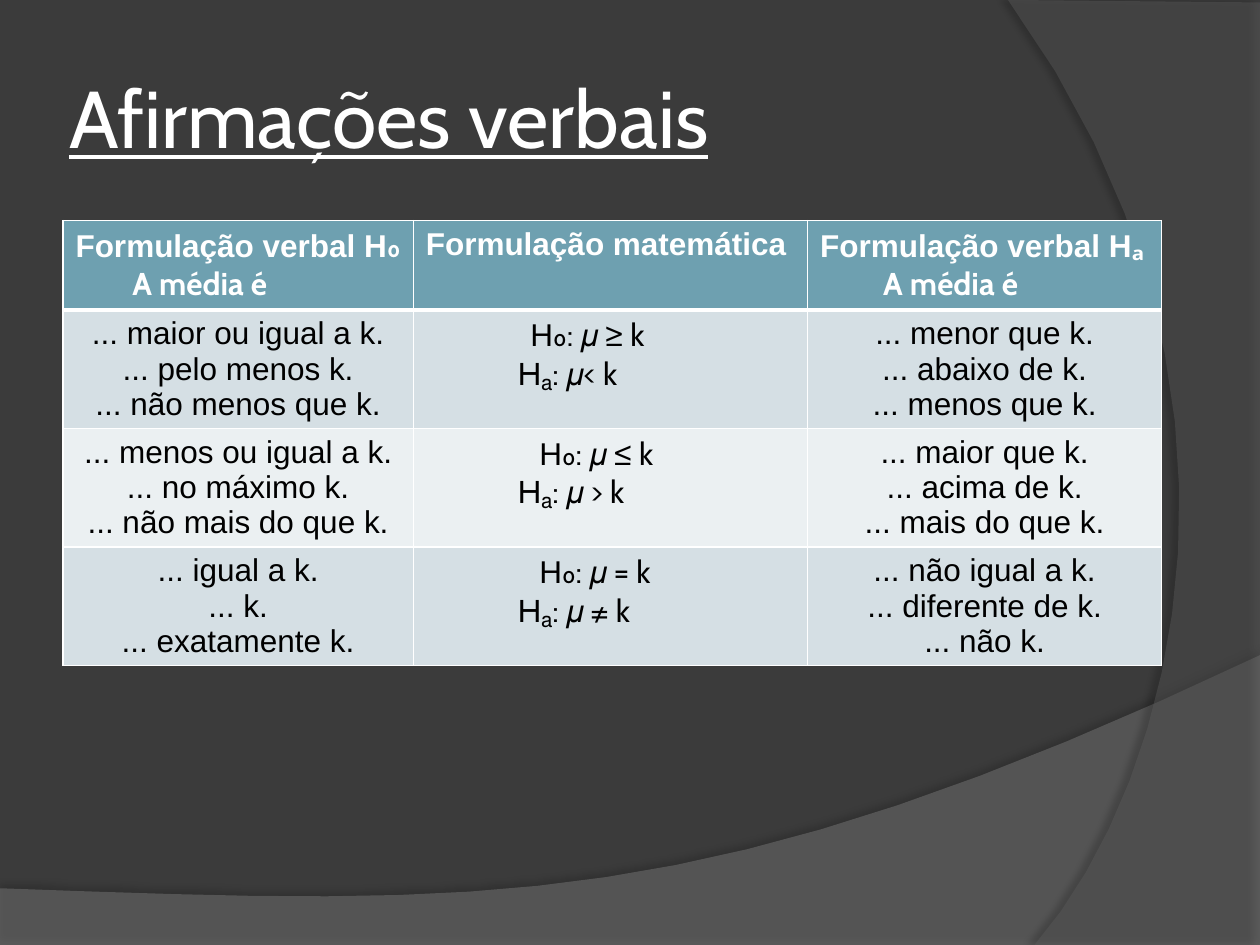
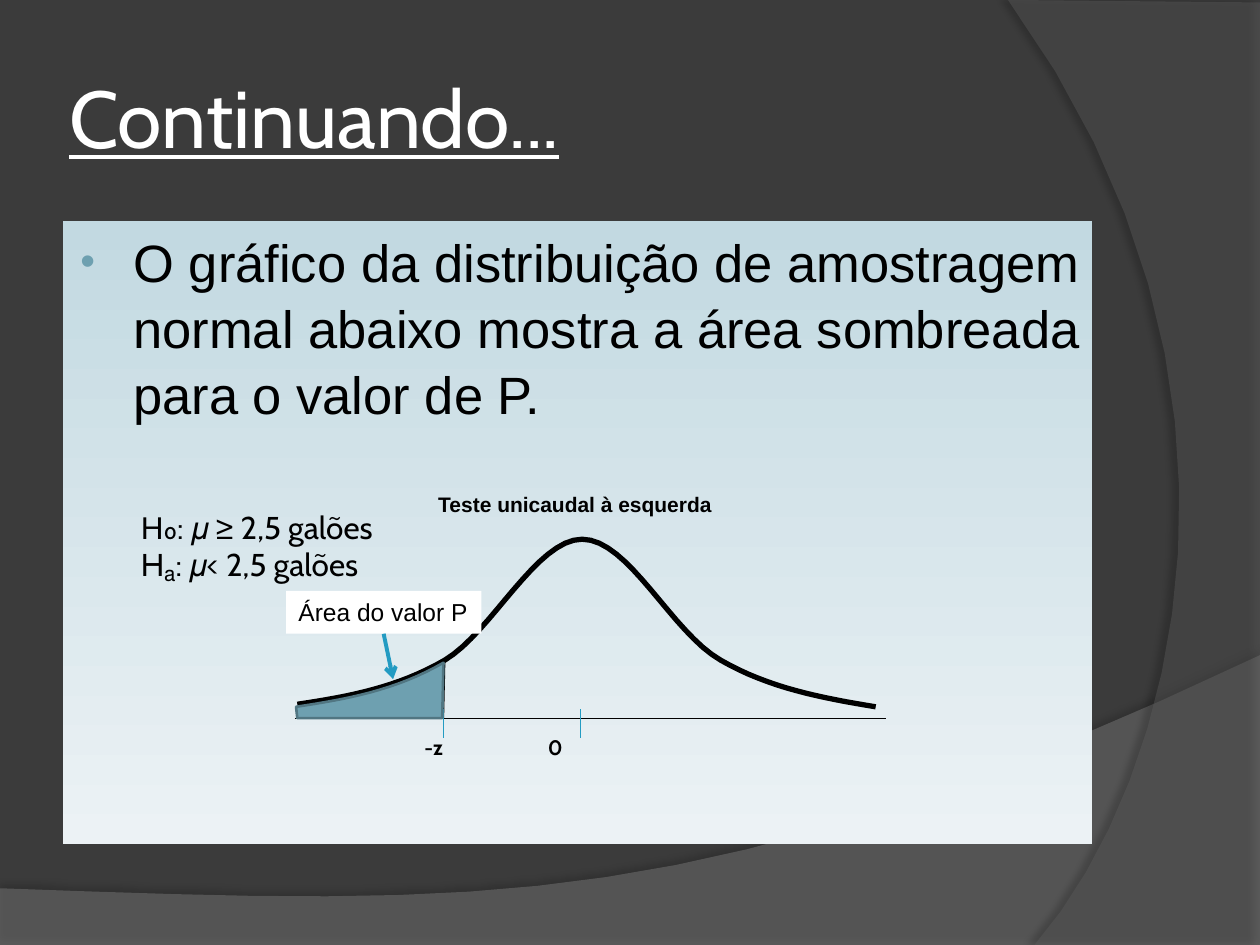
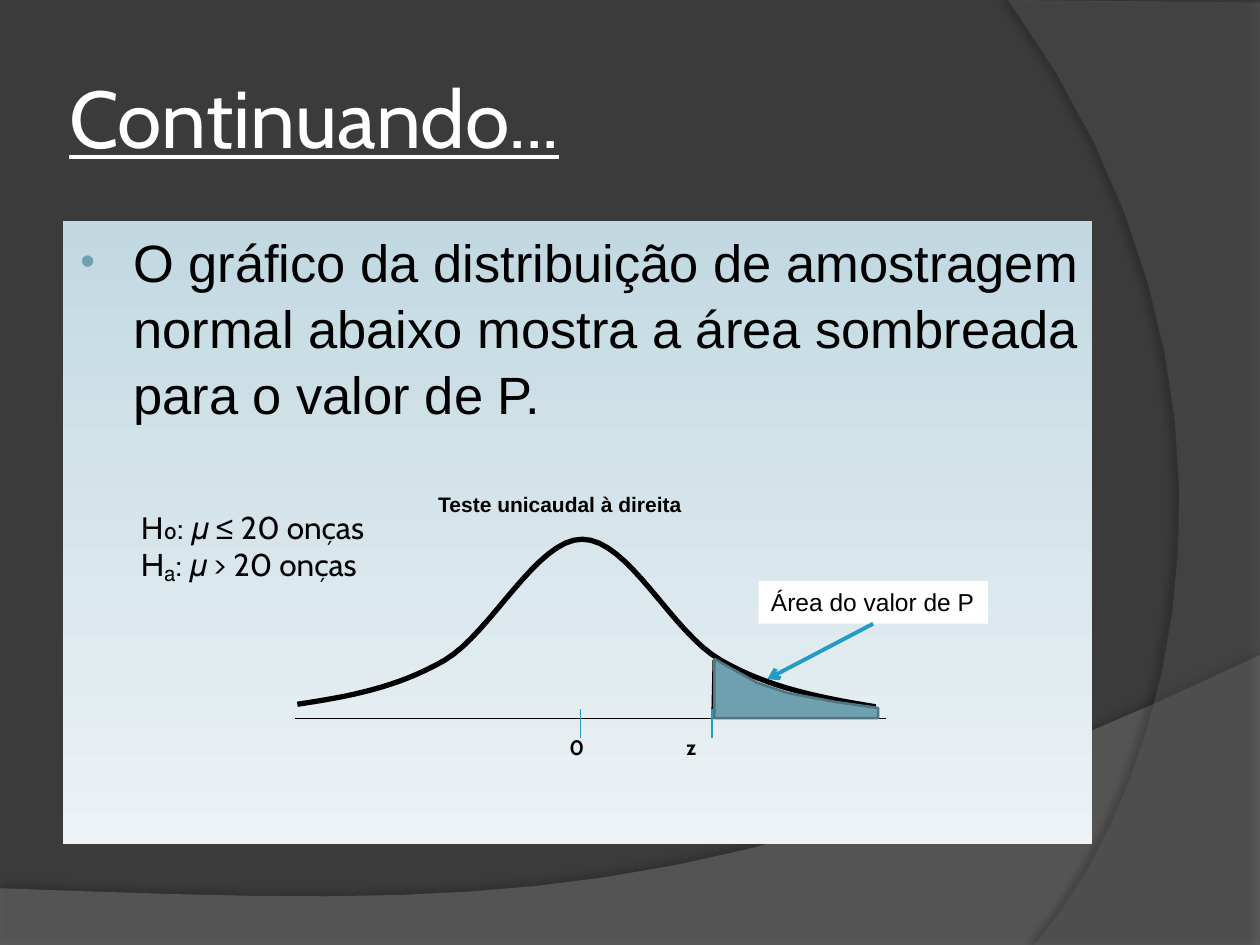
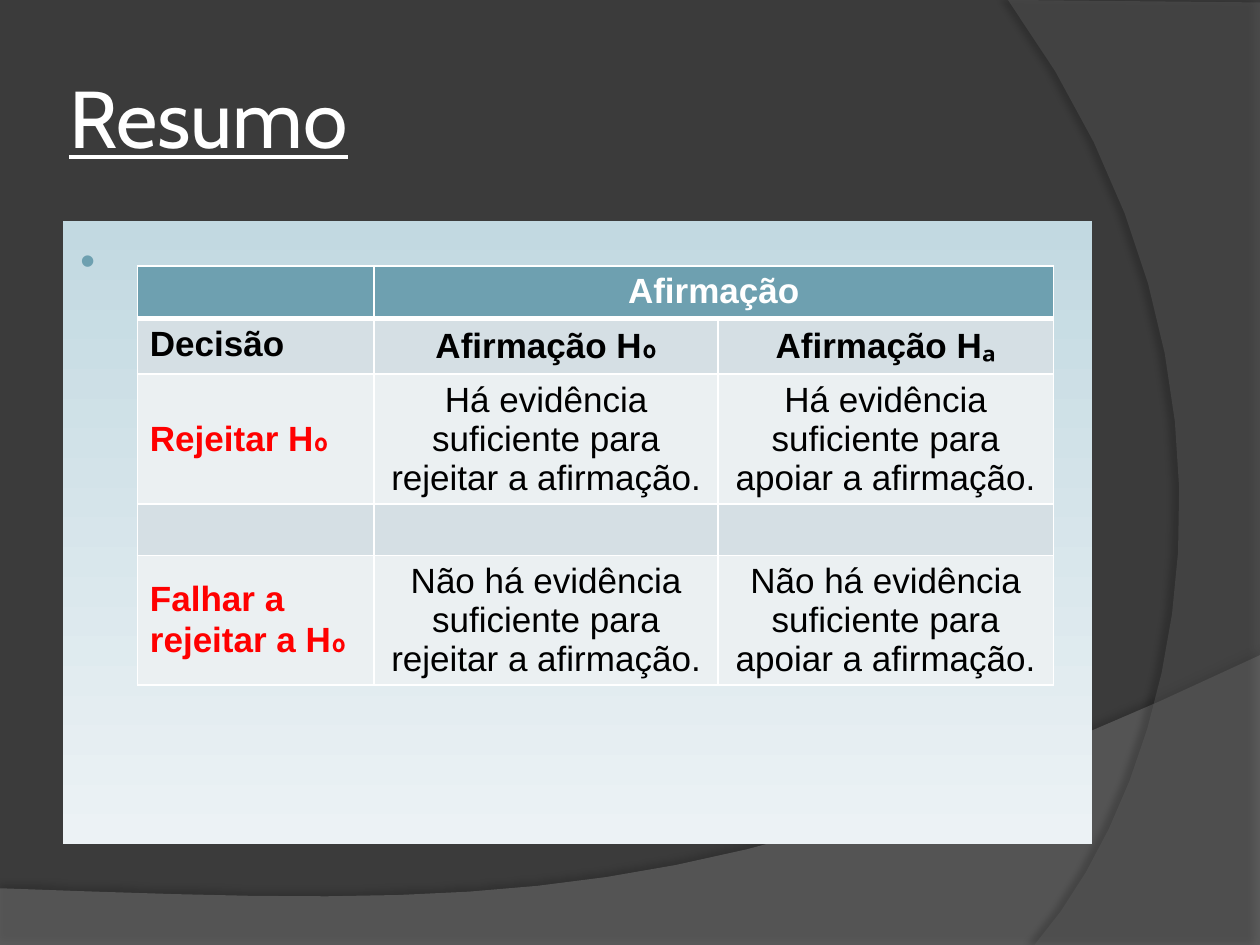
"""Builds four slides on hypothesis tests: verbal claims, two tail areas and a summary."""
import dataclasses

import lxml.etree
import pptx
import pptx.dml.color
import pptx.enum.shapes
import pptx.enum.text
import pptx.oxml.ns
import pptx.util

Inches = pptx.util.Inches
Pt = pptx.util.Pt
qn = pptx.oxml.ns.qn
ALIGN = pptx.enum.text.PP_ALIGN
ANCHOR = pptx.enum.text.MSO_ANCHOR

SANS, DISPLAY = "Arial", "Cabin"
WHITE, BLACK, RED = "FFFFFF", "000000", "FF0000"
BACKDROP, TEAL, TEAL_EDGE, BLUE = "3B3B3B", "6EA0B0", "517682", "239BC2"
ROW_FILLS = ("D5DFE4", "EBF0F2")
PANEL_FILLS = ("C2D9E1", "ECF2F5")
BASELINE = 5.7


def colour(hex_text):
    """Turn a hex string into a colour."""
    return pptx.dml.color.RGBColor.from_string(hex_text)


def add_xml(parent, tag, **attributes):
    """Append a drawing element with the given attributes."""
    values = {name: str(value) for name, value in attributes.items()}
    return lxml.etree.SubElement(parent, qn(tag), values)


def bezier(start, first, second, end, steps=16):
    """Return points along a cubic curve, both ends included."""
    points = []
    for step in range(steps + 1):
        t = step / steps
        weights = ((1 - t) ** 3, 3 * t * (1 - t) ** 2, 3 * t * t * (1 - t), t ** 3)
        points.append(tuple(sum(w * p[axis] for w, p in zip(weights, (start, first, second, end)))
                            for axis in (0, 1)))
    return points


LEFT_TAIL = bezier((2.36, 5.59), (2.76, 5.53), (3.15, 5.46), (3.53, 5.24))
RISE = bezier((3.53, 5.24), (3.9, 5.02), (4.26, 4.28), (4.62, 4.28))
FALL = bezier((4.62, 4.28), (4.99, 4.28), (5.33, 5.02), (5.72, 5.24))
RIGHT_TAIL = bezier((5.72, 5.24), (6.1, 5.46), (6.52, 5.54), (6.95, 5.61))


@dataclasses.dataclass
class Words:
    """Lines of text with one look; a bar in a line switches to the display font."""
    lines: tuple
    size: float = 18
    ink: str = BLACK
    bold: bool = False
    align: object = ALIGN.LEFT
    indents: tuple = ()
    anchor: object = ANCHOR.TOP


class Slides:
    """Holds the deck, its shared style and the current page."""

    def __init__(self):
        """Set the slide size and clean the shared layout."""
        self.deck = pptx.Presentation()
        self.deck.slide_width, self.deck.slide_height = Inches(10), Inches(7.5)
        self.layout = self.deck.slide_layouts[5]
        self.page = None
        fill = self.layout.background.fill
        fill.solid()
        fill.fore_color.rgb = colour(BACKDROP)
        for holder in list(self.layout.placeholders):
            if holder.placeholder_format.idx >= 10:
                holder.element.getparent().remove(holder.element)

    def new_page(self, title):
        """Start a page with its underlined title."""
        self.page = self.deck.slides.add_slide(self.layout)
        if len(self.deck.slides) == 1:
            self.shared_bands()
        box = self.page.shapes.title
        box.left, box.top, box.width, box.height = map(Inches, (0.5, 0.3, 8.17, 1.25))
        frame = box.text_frame
        frame.margin_left = frame.margin_right = Inches(0.05)
        frame.auto_size = pptx.enum.text.MSO_AUTO_SIZE.NONE
        self.set_words(frame, Words((f"|{title}",), 46, WHITE, anchor=ANCHOR.MIDDLE))
        for span in frame.paragraphs[0].runs:
            span.font.underline = True

    def shared_bands(self):
        """Draw the two translucent curved bands and place them in the layout."""
        bottom = [(0, 7.5), (10, 7.5)] + bezier((10, 5.2), (5.59, 7.29), (3.91, 7.19), (0, 7.05))
        right = [(10, 0.02), (10, 7.5)] + bezier((8.21, 7.5), (9.35, 6.19), (10.18, 3), (8, 0))
        looks = ((bottom, "7F7F7F", 45, 35, 3.5, 270), (right, "5E5E5E", 40, 45, 4, 180))
        for place, (points, fill, opacity, darkness, distance, angle) in enumerate(looks):
            band = self.outline(points, fill=fill)
            properties = band.element.spPr
            add_xml(properties.find(f"{qn('a:solidFill')}/{qn('a:srgbClr')}"),
                    "a:alpha", val=opacity * 1000)
            shadow = add_xml(properties.find(qn("a:effectLst")), "a:outerShdw", blurRad=Pt(4),
                             dist=Pt(distance), dir=angle * 60000, algn="ctr", rotWithShape=0)
            add_xml(add_xml(shadow, "a:srgbClr", val=BLACK), "a:alpha", val=darkness * 1000)
            self.layout.shapes.element.insert(2 + place, band.element)

    def set_words(self, frame, words):
        """Fill a text frame with words."""
        frame.vertical_anchor = words.anchor
        for number, line in enumerate(words.lines):
            para = frame.paragraphs[0] if number == 0 else frame.add_paragraph()
            para.alignment = words.align
            if words.indents and words.indents[number]:
                para._p.get_or_add_pPr().set("marL", str(Inches(words.indents[number])))
            for text, face in zip(line.split("|"), (SANS, DISPLAY)):
                if text:
                    span = para.add_run()
                    span.text = text
                    font = span.font
                    font.name, font.size, font.bold = face, Pt(words.size), words.bold
                    font.color.rgb = colour(words.ink)

    def paint(self, shape, fill=None, edge=None, weight=1.0):
        """Set the fill and line of a shape and drop its shadow."""
        if fill:
            shape.fill.solid()
            shape.fill.fore_color.rgb = colour(fill)
        else:
            shape.fill.background()
        if edge:
            shape.line.color.rgb = colour(edge)
            shape.line.width = Pt(weight)
        else:
            shape.line.fill.background()
        shape.shadow.inherit = False

    def outline(self, points, fill=None, edge=None, weight=1.0, close=True):
        """Draw a freeform through points."""
        start, *others = [tuple(map(Inches, point)) for point in points]
        builder = self.page.shapes.build_freeform(*start)
        builder.add_line_segments(others, close=close)
        shape = builder.convert_to_shape()
        self.paint(shape, fill, edge, weight)
        return shape

    def rectangle(self, place, fill):
        """Draw a plain rectangle."""
        box = self.page.shapes.add_shape(pptx.enum.shapes.MSO_SHAPE.RECTANGLE, *map(Inches, place))
        self.paint(box, fill)
        return box

    def text(self, place, words, wrap=False):
        """Place a text box."""
        box = self.page.shapes.add_textbox(*map(Inches, place))
        box.text_frame.word_wrap = wrap
        self.set_words(box.text_frame, words)

    def line(self, start, end, ink=BLACK, weight=0.75, source=None):
        """Draw a straight line, or an arrow from the bottom of a source box."""
        connector = self.page.shapes.add_connector(
            pptx.enum.shapes.MSO_CONNECTOR.STRAIGHT, *map(Inches, start + end))
        connector.line.color.rgb = colour(ink)
        connector.line.width = Pt(weight)
        properties = connector.element.spPr
        if source is not None:
            connector.begin_connect(source, 2)
            add_xml(properties.find(qn("a:ln")), "a:tailEnd", type="arrow")
        add_xml(properties, "a:effectLst")

    def panel(self, text, align=ALIGN.JUSTIFY):
        """Draw the pale gradient panel with one bullet."""
        box = self.rectangle((0.5, 1.75, 8.17, 4.95), WHITE)
        box.fill.gradient()
        box.fill.gradient_angle = 270
        for stop, shade in zip(box.fill.gradient_stops, PANEL_FILLS):
            stop.color.rgb = colour(shade)
        box.text_frame.word_wrap = True
        self.set_words(box.text_frame, Words((text,), 30, align=align, indents=(0.46,)))
        para = box.text_frame.paragraphs[0]
        para.line_spacing = 1.05
        para.space_before = Pt(6)
        properties = para._p.get_or_add_pPr()
        properties.set("indent", str(Inches(-0.42)))
        add_xml(add_xml(properties, "a:buClr"), "a:srgbClr", val=TEAL)
        add_xml(properties, "a:buSzPct", val=80000)
        add_xml(properties, "a:buFont", typeface=SANS)
        add_xml(properties, "a:buChar", char="•")

    def table(self, corner, widths, heights, rows):
        """Build a table with a teal header and banded rows; None leaves a cell empty."""
        size = (sum(widths), sum(heights))
        frame = self.page.shapes.add_table(len(rows), len(widths), *map(Inches, corner + size))
        table = frame.table
        for column, width in zip(table.columns, widths):
            column.width = Inches(width)
        for number, (row, height, entries) in enumerate(zip(table.rows, heights, rows)):
            row.height = Inches(height)
            for cell, words in zip(row.cells, entries):
                cell.fill.solid()
                cell.fill.fore_color.rgb = colour(ROW_FILLS[(number - 1) % 2] if number else TEAL)
                self.borders(cell, top=3 if number == 1 else 1, bottom=1 if number else 3)
                if words:
                    self.set_words(cell.text_frame, words)
                    cell.vertical_anchor = words.anchor
        return table

    def borders(self, cell, top, bottom):
        """Give a cell white borders."""
        properties = cell._tc.get_or_add_tcPr()
        edges = (("a:lnL", 1), ("a:lnR", 1), ("a:lnT", top), ("a:lnB", bottom))
        for place, (tag, weight) in enumerate(edges):
            edge = add_xml(properties, tag, w=Pt(weight))
            add_xml(add_xml(edge, "a:solidFill"), "a:srgbClr", val=WHITE)
            properties.insert(place, edge)

    def tail_test(self, heading, hypotheses, cut, area, marks, label, label_place, tip,
                  align=ALIGN.JUSTIFY):
        """Build a page showing the bell curve with one shaded tail."""
        self.new_page("Continuando...")
        self.panel("O gráfico da distribuição de amostragem normal abaixo mostra "
                   "a área sombreada para o valor de P.", align)
        self.line((2.34, BASELINE), (7.03, BASELINE))
        self.line((cut, BASELINE), (cut + 0.01, 5.24))
        self.outline(LEFT_TAIL + RISE[1:] + FALL[1:] + RIGHT_TAIL[1:],
                     edge=BLACK, weight=3, close=False)
        for tick in (cut, 4.61):
            self.line((tick, 5.63), (tick, 5.86), BLUE)
        for mark, left in marks:
            self.text((left, 5.78, 0.4, 0.3), Words((f"|{mark}",), 12, bold=True))
        self.outline(area, TEAL, TEAL_EDGE, 1.5)
        self.text((1.02, 3.98, 2.42, 0.71), Words(hypotheses), wrap=True)
        self.text((3.38, 3.85, 2.4, 0.3), Words((heading,), 12, bold=True))
        box = self.rectangle(label_place, WHITE)
        box.text_frame.word_wrap = False
        self.set_words(box.text_frame, Words((label,), 14))
        left, top, width, height = label_place
        self.line((left + width / 2, top + height), tip, BLUE, 2.25, source=box)


def claims_page(slides):
    """Build the table of verbal claims."""
    def header(*lines, indent=0):
        return Words(lines, ink=WHITE, bold=True, indents=(0, indent))

    def claims(*endings):
        return Words(tuple(f"... {ending}" for ending in endings), align=ALIGN.CENTER)

    def hypotheses(null, alternative, indent=0.9):
        return Words((f"H|₀: 𝜇 {null} k", f"|Hₐ: 𝜇{alternative} k"), indents=(indent, 0.73))

    slides.new_page("Afirmações verbais")
    slides.table((0.5, 1.75), (2.78, 3.13, 2.81), (0.7, 0.94, 0.94, 0.94), (
        (header("Formulação verbal H|₀", "|A média é", indent=0.45),
         header("Formulação matemática"),
         header("Formulação verbal H|ₐ", "|A média é", indent=0.5)),
        (claims("maior ou igual a k.", "pelo menos k.", "não menos que k."),
         hypotheses("≥", "<", indent=0.83),
         claims("menor que k.", "abaixo de k.", "menos que k.")),
        (claims("menos ou igual a k.", "no máximo k.", "não mais do que k."),
         hypotheses("≤", " >"),
         claims("maior que k.", "acima de k.", "mais do que k.")),
        (claims("igual a k.", "k.", "exatamente k."),
         hypotheses("=", " ≠"),
         claims("não igual a k.", "diferente de k.", "não k."))))


def tail_pages(slides):
    """Build the left-tailed and the right-tailed test pages."""
    left_area = [(x - 0.01, y + 0.02) for x, y in LEFT_TAIL]
    slides.tail_test(
        "Teste unicaudal à esquerda", ("H|₀: 𝜇 ≥ 2,5 galões", "|Hₐ: 𝜇< 2,5 galões"),
        cut=3.52, area=left_area + [(3.51, BASELINE), (2.36, BASELINE)],
        marks=(("-z", 3.27), ("0", 4.25)),
        label="Área do valor P", label_place=(2.27, 4.69, 1.55, 0.34), tip=(3.12, 5.39))
    right_area = [(5.67, BASELINE), (5.67, 5.23), (6.01, 5.42), (6.25, 5.5), (6.62, 5.57),
                  (6.97, 5.62), (6.97, BASELINE)]
    slides.tail_test(
        "Teste unicaudal à direita", ("H|₀: 𝜇 ≤ 20 onças", "|Hₐ: 𝜇 > 20 onças"),
        cut=5.65, area=right_area, marks=(("0", 4.42), ("z", 5.35)),
        label="Área do valor de P", label_place=(6.02, 4.61, 1.82, 0.34), tip=(6.09, 5.39),
        align=ALIGN.LEFT)


def summary_page(slides):
    """Build the table of decisions."""
    def heading(text, ink=BLACK, align=ALIGN.CENTER):
        return Words((text,), 20, ink, True, align)

    def decision(text):
        return Words((text,), 20, RED, True, anchor=ANCHOR.MIDDLE)

    def evidence(opening):
        return [Words((f"{opening} evidência suficiente para {verb} a afirmação.",), 20,
                      align=ALIGN.CENTER) for verb in ("rejeitar", "apoiar")]

    slides.new_page("Resumo")
    slides.panel(".")
    table = slides.table((1.09, 2.11), (1.88, 2.73, 2.66), (0.42, 0.43, 1.03, 0.41, 1.03), (
        (None, heading("Afirmação", WHITE), None),
        (heading("Decisão", align=ALIGN.LEFT), heading("Afirmação H|₀"), heading("Afirmação H|ₐ")),
        (decision("Rejeitar H|₀"), *evidence("Há")),
        (None, None, None),
        (decision("Falhar a rejeitar a H|₀"), *evidence("Não há"))))
    table.cell(0, 1).merge(table.cell(0, 2))


def main():
    """Build and save the deck."""
    slides = Slides()
    claims_page(slides)
    tail_pages(slides)
    summary_page(slides)
    slides.deck.save("out.pptx")


if __name__ == "__main__":
    main()
